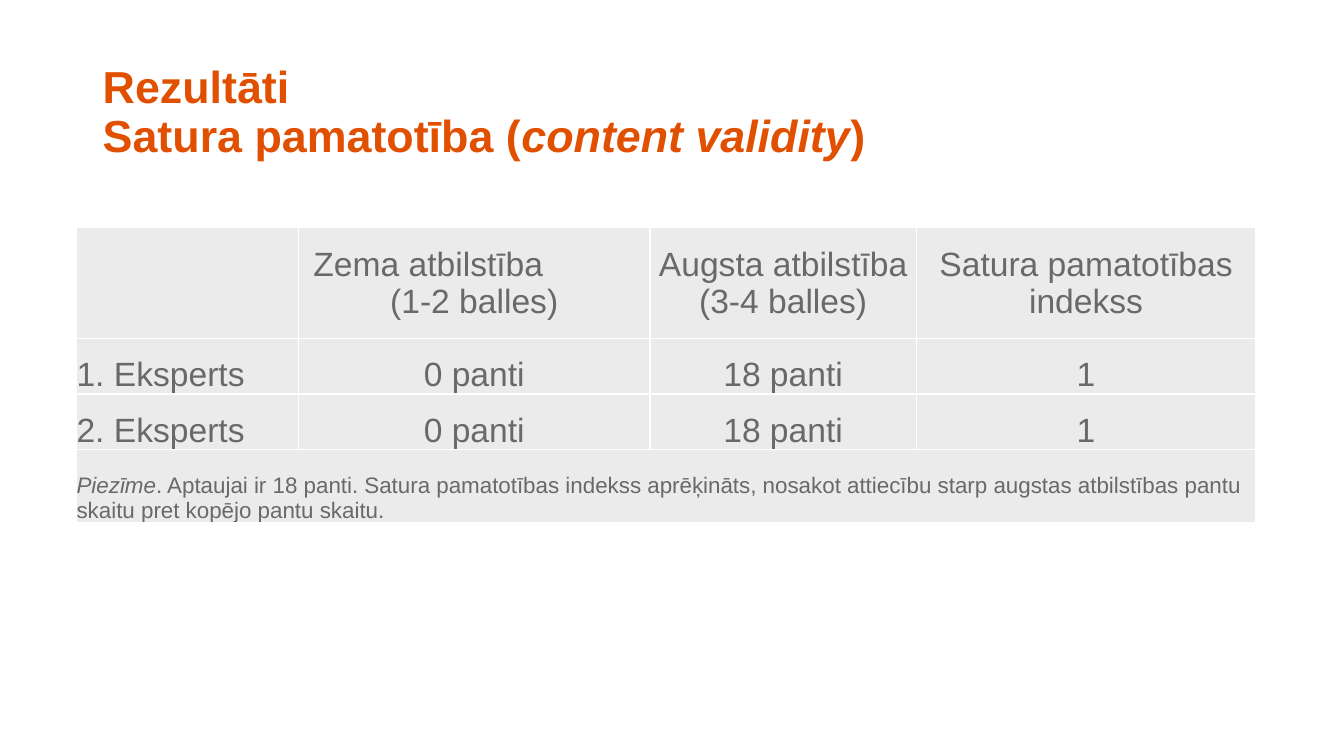
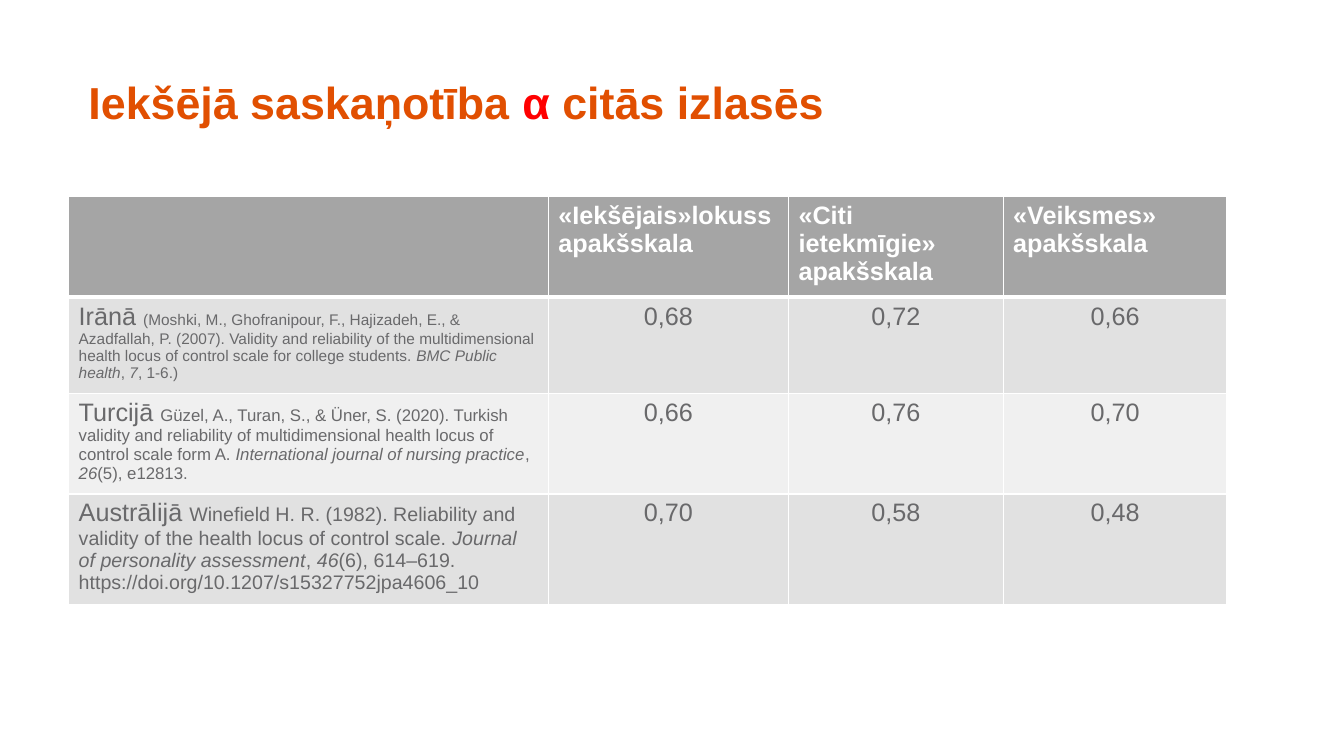
import pptx
import pptx.util
import pptx.dml.color
import pptx.enum.text
import pptx.oxml
import pptx.oxml.ns
from lxml import etree

Cm = pptx.util.Cm
Pt = pptx.util.Pt
ALIGN = pptx.enum.text.PP_ALIGN
ANCHOR = pptx.enum.text.MSO_ANCHOR

HUES = {
    "title": "E14F01",
    "alpha": "FF0000",
    "text": "69696B",
    "white": "FFFFFF",
    "plain": "EBEBEB",
    "head": "A5A5A5",
    "odd": "E1E1E1",
    "even": "F0F0F0",
}
TITLE = {"name": "Arial", "size": Pt(32), "bold": True, "italic": False, "hue": "title"}
LARGE = {"name": "Arial", "size": Pt(24), "bold": False, "italic": False, "hue": "text"}
BODY = {**LARGE, "size": Pt(18)}
HEAD = {**BODY, "bold": True, "hue": "white"}
SLANT = {"italic": True}
TIGHT = dict.fromkeys(("margin_left", "margin_right", "margin_top", "margin_bottom"), 0)


def apply(item, form):
    for key, value in form.items():
        setattr(item, key, value)


def get_rgb(hue):
    return pptx.dml.color.RGBColor.from_string(HUES[hue])


def add_runs(para, runs, base):
    for text, change in runs:
        form = {**base, **change}
        hue = form.pop("hue")
        run = para.add_run()
        run.text = text
        apply(run.font, form)
        run.font.color.rgb = get_rgb(hue)


def add_title(slide, left, top, lines):
    box = slide.shapes.add_textbox(Cm(left), Cm(top), Cm(29.21), Cm(3.68))
    frame = box.text_frame
    apply(frame, {"word_wrap": True, "vertical_anchor": ANCHOR.MIDDLE})
    para = frame.paragraphs[0]
    para.line_spacing = 0.9
    for index, runs in enumerate(lines):
        if index:
            para.add_line_break()
        add_runs(para, runs, TITLE)


def add_edges(cell, **widths):
    props = cell._tc.get_or_add_tcPr()
    for side in "LRTB":
        name = pptx.oxml.ns.qn("a:ln" + side)
        line = etree.SubElement(props, name, w=str(Pt(widths.get(side, 1))))
        fill = etree.SubElement(line, pptx.oxml.ns.qn("a:solidFill"))
        etree.SubElement(fill, pptx.oxml.ns.qn("a:srgbClr"), val=HUES["white"])


def add_grid(slide, left, top, cols, rows):
    frame = slide.shapes.add_table(
        len(rows), len(cols), Cm(left), Cm(top), Cm(sum(cols)), Cm(sum(rows)))
    grid = frame.table
    apply(grid, {"first_row": False, "horz_banding": False})
    for col, width in zip(grid.columns, cols):
        col.width = Cm(width)
    for row, height in zip(grid.rows, rows):
        row.height = Cm(height)
    return grid


def fill_cell(cell, runs, base, hue, align, form, **edges):
    add_edges(cell, **edges)
    cell.fill.solid()
    cell.fill.fore_color.rgb = get_rgb(hue)
    apply(cell, form)
    para = cell.text_frame.paragraphs[0]
    para.alignment = align
    if isinstance(runs, str):
        runs = [(runs, {})] if runs else []
    add_runs(para, runs, base)


def add_scores(slide):
    grid = add_grid(slide, 1.93, 5.74, [5.59, 8.86, 6.71, 8.56], [2.79, 1.4, 1.4, 1.85])
    note = [
        ("Piezīme", SLANT),
        (". Aptaujai ir 18 panti. Satura pamatotības indekss aprēķināts, nosakot "
         "attiecību starp augstas atbilstības pantu skaitu pret kopējo pantu skaitu.", {}),
    ]
    rows = [
        ["", "Zema atbilstība", "Augsta atbilstība (3-4 balles)", "Satura pamatotības indekss"],
        ["1. Eksperts", "0 panti", "18 panti", "1"],
        ["2. Eksperts", "0 panti", "18 panti", "1"],
        [note, "", "", ""],
    ]
    grid.cell(3, 0).merge(grid.cell(3, 3))
    for r, row in enumerate(rows):
        base = {**LARGE, "size": Pt(16)} if r == 3 else LARGE
        form = {**TIGHT, "vertical_anchor": ANCHOR.BOTTOM if r else ANCHOR.MIDDLE}
        for c, runs in enumerate(row):
            align = ALIGN.CENTER if c else ALIGN.LEFT
            fill_cell(grid.cell(r, c), runs, base, "plain", align, form)
    frame = grid.cell(0, 1).text_frame
    first = frame.paragraphs[0]
    first.alignment = ALIGN.LEFT
    first._p.get_or_add_pPr().set("marL", str(Cm(0.38)))
    para = frame.add_paragraph()
    para.alignment = ALIGN.CENTER
    add_runs(para, [("(1-2 balles)", {})], LARGE)


def cite(place, size, work, source, issue, end):
    small = {"size": Pt(size)}
    slant = {**small, **SLANT}
    return [(place + " ", {}), (work + " ", small), (source, slant),
            (", ", small), (issue, slant), (end, small)]


def add_alphas(slide):
    grid = add_grid(slide, 1.73, 4.95, [12.09, 6.05, 5.41, 5.64], [2.36, 2.24, 2.39, 2.62])
    rows = [
        ["", "«Iekšējais»lokuss apakšskala", "«Citi ietekmīgie» apakšskala",
         "«Veiksmes» apakšskala"],
        [cite("Irānā", 11,
              "(Moshki, M., Ghofranipour, F., Hajizadeh, E., & Azadfallah, P. (2007). "
              "Validity and reliability of the multidimensional health locus of control "
              "scale for college students.", "BMC Public health", "7", ", 1-6.)"),
         "0,68", "0,72", "0,66"],
        [cite("Turcijā", 12,
              "Güzel, A., Turan, S., & Üner, S. (2020). Turkish validity and reliability "
              "of multidimensional health locus of control scale form A.",
              "International journal of nursing practice", "26", "(5), e12813."),
         "0,66", "0,76", "0,70"],
        [cite("Austrālijā", 14,
              "Winefield H. R. (1982). Reliability and validity of the health locus of "
              "control scale.", "Journal of personality assessment", "46",
              "(6), 614–619. https://doi.org/10.1207/s15327752jpa4606_10"),
         "0,70", "0,58", "0,48"],
    ]
    hues = ["head", "odd", "even", "odd"]
    edges = [{"B": 3}, {"T": 3}, {}, {}]
    for r, row in enumerate(rows):
        base = BODY if r else HEAD
        for c, runs in enumerate(row):
            align = ALIGN.CENTER if r and c else ALIGN.LEFT
            fill_cell(grid.cell(r, c), runs, base, hues[r], align, {}, **edges[r])


def main():
    deck = pptx.Presentation()
    apply(deck, {"slide_width": Cm(33.87), "slide_height": Cm(19.05)})
    blank = deck.slide_layouts[6]

    slide = deck.slides.add_slide(blank)
    add_title(slide, 2.34, 1.02, [
        [("Rezultāti", {})],
        [("Satura pamatotība (", {}), ("content validity", SLANT), (")", {})],
    ])
    add_scores(slide)

    slide = deck.slides.add_slide(blank)
    add_title(slide, 1.98, 0.81, [
        [("Iekšējā saskaņotība ", {}), ("α ", {"hue": "alpha"}), ("citās izlasēs", {})],
    ])
    add_alphas(slide)

    deck.save("out.pptx")


if __name__ == "__main__":
    main()
